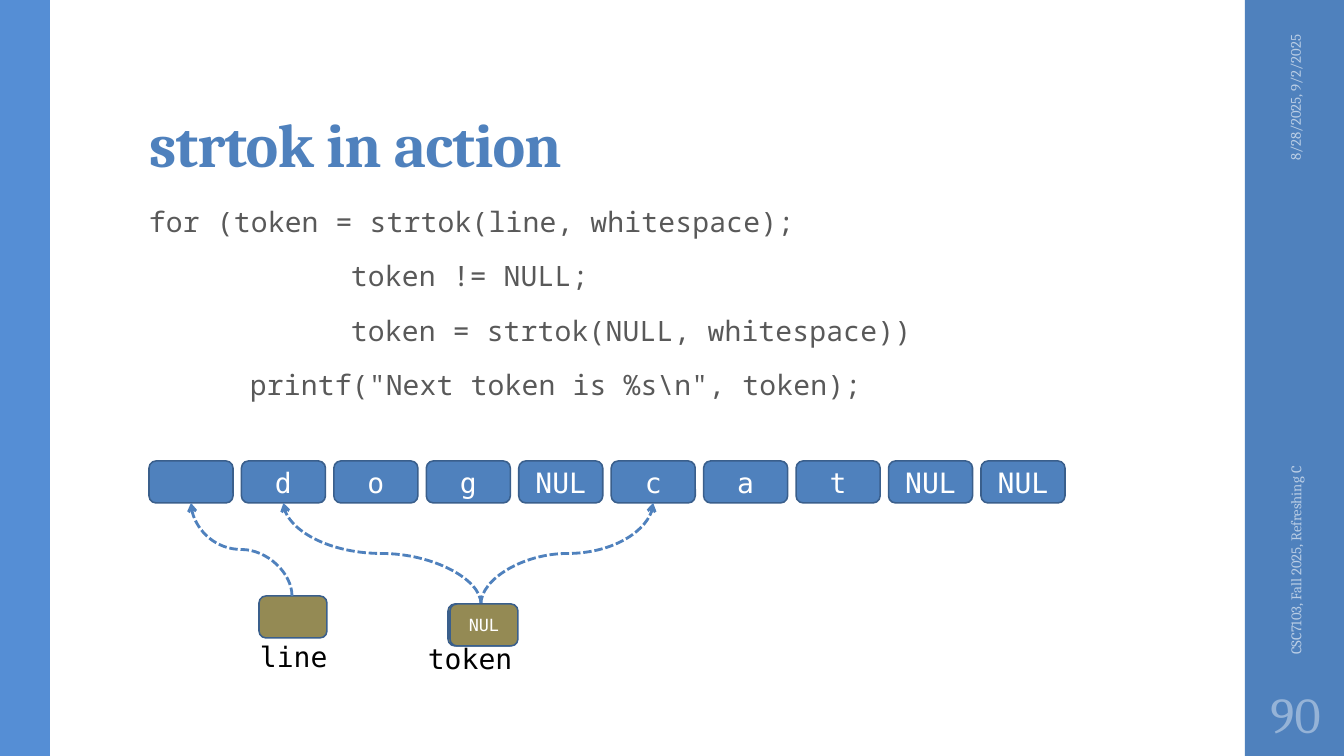
from lxml.etree import SubElement
from pptx import Presentation
from pptx.dml.color import RGBColor
from pptx.enum.dml import MSO_LINE
from pptx.enum.shapes import MSO_CONNECTOR, MSO_SHAPE
from pptx.enum.text import MSO_ANCHOR, PP_ALIGN
from pptx.oxml.ns import qn
from pptx.util import Pt

# Content
TITLE = "strtok in action"
CODE = [  # indent level, text
    (0, "for (token = strtok(line, whitespace);"),
    (2, "token != NULL;"),
    (2, "token = strtok(NULL, whitespace))"),
    (1, r'printf("Next token is %s\n", token);'),
]
CELLS = ["", "d", "o", "g", "NUL", "c", "a", "t", "NUL", "NUL"]
POINTERS = [(259, 596, ""), (448, 604, "")]  # left, top, text
NULL_POINTER = (450, 604, "NUL")
ARROWS = [(292, 596, 0), (481, 604, 1), (481, 604, 5)]  # start x, y, target cell
LABELS = [("line", (250, 635, 89, 44)), ("token", (418, 637, 105, 44))]
SIDEBAR = [  # text, box, alignment, size, rotation, colour
    ("8/28/2025, 9/2/2025", (1190, 110, 210, 40), PP_ALIGN.RIGHT, 10.5, 270, "footer"),
    ("CSC7103, Fall 2025, Refreshing C", (1098, 447, 395, 40), PP_ALIGN.LEFT, 10.5, 270, "footer"),
    ("90", (1245, 680, 101, 66), PP_ALIGN.CENTER, 36, 0, "number"),
]

COLORS = {
    "blue": "4F81BD", "left band": "558ED5", "gold": "948A54", "outline": "3A5F8C",
    "code": "595959", "footer": "B9CDE5", "number": "95B3D7",
    "white": "FFFFFF", "black": "000000",
}
SERIF, MONO, CODE_FONT = "Cambria", "DejaVu Sans Mono", "Noto Sans Mono"

# Layout in px
SCALE = 914400 / 100.8
WIDTH, HEIGHT = 1344, 756
CELL_LEFT, CELL_TOP, CELL_WIDTH, BOX_HEIGHT = 149, 461, 84, 42
CELL_SPAN = 832  # left edge of first cell to left edge of last
POINTER_WIDTH = 68
CODE_INDENT = 101


def emu(px):
    return round(px * SCALE)


def color(name):
    return RGBColor.from_string(COLORS[name])


def place(shape, box):
    shape.left, shape.top, shape.width, shape.height = map(emu, box)


def add_run(paragraph, text, font, size, color_name, bold=False, spacing=0):
    run = paragraph.add_run()
    run.text = text
    run.font.name, run.font.size, run.font.bold = font, Pt(size), bold
    run.font.color.rgb = color(color_name)
    if spacing:
        run.font._element.set("spc", str(spacing))


def add_text_box(slide, box, wrap=True):
    shape = slide.shapes.add_textbox(*map(emu, box))
    shape.text_frame.word_wrap = wrap
    return shape


def add_box(slide, kind, box, fill, text="", size=20, outlined=True):
    shape = slide.shapes.add_shape(kind, *map(emu, box))
    shape.shadow.inherit = False
    shape.fill.solid()
    shape.fill.fore_color.rgb = color(fill)
    if outlined:
        shape.line.color.rgb = color("outline")
        shape.line.width = Pt(1.1)
    else:
        shape.line.fill.background()
    if text:
        shape.text_frame.vertical_anchor = MSO_ANCHOR.MIDDLE
        paragraph = shape.text_frame.paragraphs[0]
        paragraph.alignment = PP_ALIGN.CENTER
        add_run(paragraph, text, MONO, size, "white")


def add_pointer(slide, left, top, text):
    add_box(slide, MSO_SHAPE.ROUNDED_RECTANGLE, (left, top, POINTER_WIDTH, BOX_HEIGHT),
            "gold", text, 12)


def cell_left(index):
    return CELL_LEFT + CELL_SPAN * index / (len(CELLS) - 1)


def add_arrow(slide, start_x, start_y, cell):
    """Curve that leaves and arrives vertically: a horizontal S turned a quarter."""
    end_x, end_y = cell_left(cell) + CELL_WIDTH / 2, CELL_TOP + BOX_HEIGHT
    center_x, center_y = (start_x + end_x) / 2, (start_y + end_y) / 2
    half_width, half_height = (start_y - end_y) / 2, abs(end_x - start_x) / 2
    turn = 90 if end_x > start_x else 270
    if turn == 90:
        half_width = -half_width
    connector = slide.shapes.add_connector(
        MSO_CONNECTOR.CURVE,
        emu(center_x - half_width), emu(center_y + half_height),
        emu(center_x + half_width), emu(center_y - half_height))
    properties = connector.element.spPr
    properties.find(qn("a:xfrm")).set("rot", str(turn * 60000))
    connector.line.color.rgb = color("blue")
    connector.line.width = Pt(2)
    connector.line.dash_style = MSO_LINE.SQUARE_DOT
    SubElement(properties.find(qn("a:ln")), qn("a:tailEnd"), type="arrow")
    SubElement(properties, qn("a:effectLst"))


presentation = Presentation()
presentation.slide_width, presentation.slide_height = emu(WIDTH), emu(HEIGHT)
slide = presentation.slides.add_slide(presentation.slide_layouts[5])

# Side bands
add_box(slide, MSO_SHAPE.RECTANGLE, (1245, 0, WIDTH - 1245, HEIGHT), "blue", outlined=False)
add_box(slide, MSO_SHAPE.RECTANGLE, (0, 0, 50, HEIGHT), "left band", outlined=False)

# Title
title = slide.shapes.title
place(title, (139, 32, 1068, 154))
frame = title.text_frame
frame.word_wrap = True
frame.vertical_anchor = MSO_ANCHOR.BOTTOM
frame.margin_left = frame.margin_right = emu(10)
frame.margin_top, frame.margin_bottom = emu(3), emu(5)
paragraph = frame.paragraphs[0]
paragraph.alignment = PP_ALIGN.LEFT
paragraph.line_spacing = 0.9
add_run(paragraph, TITLE, SERIF, 44, "blue", bold=True, spacing=-50)

# Code
frame = add_text_box(slide, (139, 202, 948, 220)).text_frame
for number, (level, text) in enumerate(CODE):
    paragraph = frame.add_paragraph() if number else frame.paragraphs[0]
    paragraph.line_spacing = 0.95
    paragraph.space_before, paragraph.space_after = Pt(14), Pt(2)
    paragraph._p.get_or_add_pPr().set("marL", str(emu(level * CODE_INDENT)))
    add_run(paragraph, text, CODE_FONT, 20, "code", spacing=10)

# Character cells
for index, text in enumerate(CELLS):
    add_box(slide, MSO_SHAPE.ROUNDED_RECTANGLE,
            (cell_left(index), CELL_TOP, CELL_WIDTH, BOX_HEIGHT), "blue", text)

# Pointers, their arrows and labels
for pointer in POINTERS:
    add_pointer(slide, *pointer)
for arrow in ARROWS:
    add_arrow(slide, *arrow)
for text, box in LABELS:
    label = add_text_box(slide, box, wrap=False)
    add_run(label.text_frame.paragraphs[0], text, MONO, 20, "black")
add_pointer(slide, *NULL_POINTER)

# Sidebar text
for text, box, alignment, size, rotation, color_name in SIDEBAR:
    shape = add_text_box(slide, box)
    shape.rotation = rotation
    shape.text_frame.vertical_anchor = MSO_ANCHOR.MIDDLE
    if not rotation:
        shape.text_frame.margin_left = shape.text_frame.margin_right = emu(5)
    paragraph = shape.text_frame.paragraphs[0]
    paragraph.alignment = alignment
    add_run(paragraph, text, SERIF, size, color_name)

presentation.save("out.pptx")
